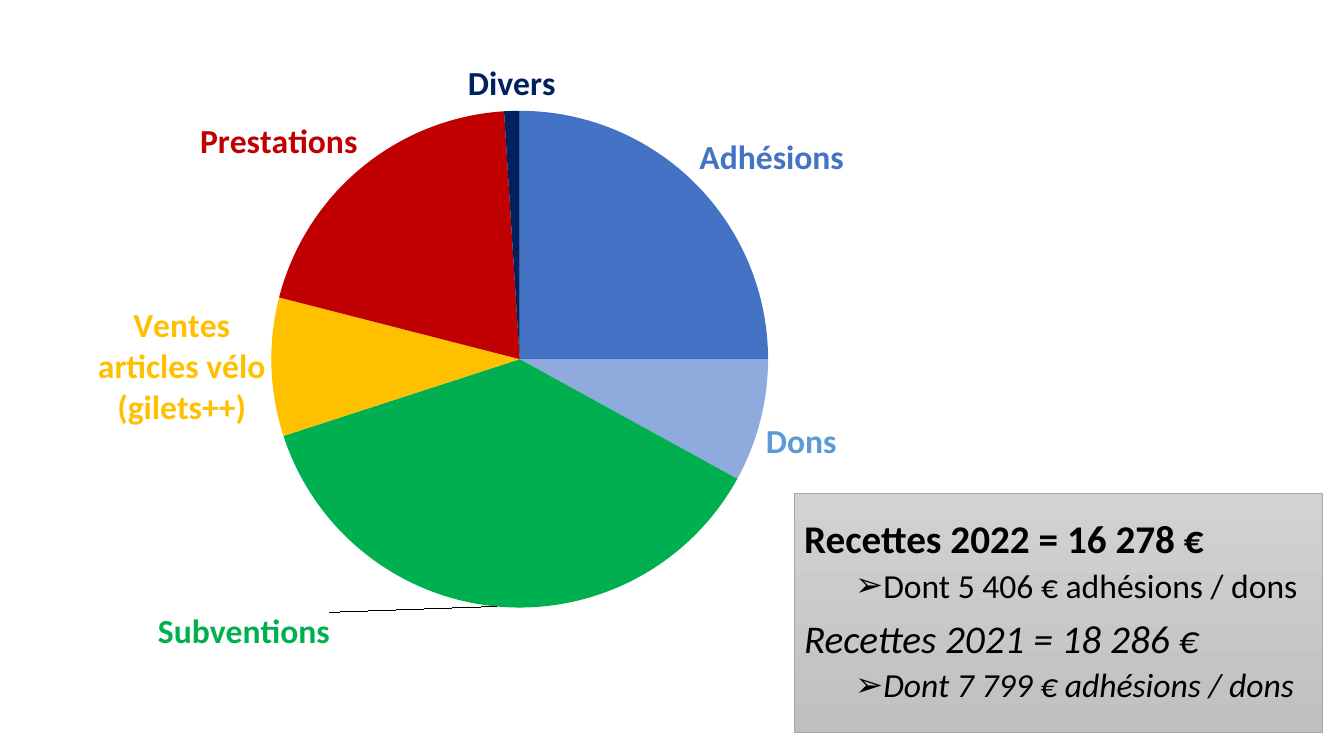
from lxml import etree
from pptx import Presentation
from pptx.chart.data import CategoryChartData
from pptx.dml.color import RGBColor
from pptx.enum.chart import XL_CHART_TYPE, XL_LABEL_POSITION
from pptx.enum.text import MSO_ANCHOR, MSO_AUTO_SIZE, PP_ALIGN
from pptx.oxml.ns import qn
from pptx.util import Pt

PIE = XL_CHART_TYPE.PIE
OUTSIDE_END = XL_LABEL_POSITION.OUTSIDE_END
MIDDLE = MSO_ANCHOR.MIDDLE
NO_AUTOFIT = MSO_AUTO_SIZE.NONE
LEFT = PP_ALIGN.LEFT
FONT = "Calibri"


def px(length):
    return round(length * 914400 / 100.8)


def color(value):
    return RGBColor.from_string(value)


presentation = Presentation()
presentation.slide_width = px(1344)
presentation.slide_height = px(756)
slide = presentation.slides.add_slide(presentation.slide_layouts[1])
title = slide.shapes.title
title.element.getparent().remove(title.element)

receipts = [
    ("Adhésions", 25, "4472C4", "4472C4"),
    ("Dons", 8, "8FAADC", "5B9BD5"),
    ("Subventions", 37, "00B050", "00B050"),
    ("Ventes articles vélo (gilets++)", 9, "FFC000", "FFC000"),
    ("Prestations", 20, "C00000", "C00000"),
    ("Divers", 1, "002060", "002060"),
]
chart_data = CategoryChartData()
chart_data.categories = [name for name, *_ in receipts]
chart_data.add_series("Recettes", [share for _, share, *_ in receipts])
chart = slide.shapes.add_chart(PIE, 0, px(49), px(976), px(618), chart_data).chart
chart.has_legend = False
chart.has_title = False
chart.font.name = FONT
chart.font.size = Pt(24)
plot = chart.plots[0]
plot.vary_by_categories = True
series = plot.series[0]

for index, (name, share, slice_color, label_color) in enumerate(receipts):
    point = series.points[index]
    point.format.fill.solid()
    point.format.fill.fore_color.rgb = color(slice_color)
    point.format.line.fill.background()
    label = point.data_label
    label.font.name = FONT
    label.font.size = Pt(24)
    label.font.bold = True
    label.font.color.rgb = color(label_color)
    label.position = OUTSIDE_END

chart_element = chart.element
for tag, shown in (("showVal", "0"), ("showCatName", "1")):
    for flag in chart_element.xpath(f".//c:dLbl/c:{tag}"):
        flag.set("val", shown)
for body in chart_element.xpath(".//c:dLbl/c:txPr/a:bodyPr"):
    body.set("wrap", "square")

pie_layout = {"layoutTarget": "inner", "xMode": "edge", "yMode": "edge",
              "x": 0.278, "y": 0.1, "w": 0.509, "h": 0.804}
subventions_layout = {"x": -0.17, "y": 0}
plot_area = chart_element.xpath(".//c:plotArea")[0]
subventions_label = chart_element.xpath(".//c:dLbl[c:idx/@val='2']")[0]
for parent, place, settings in ((plot_area, 0, pie_layout),
                                (subventions_label, 1, subventions_layout)):
    for former in parent.findall(qn("c:layout")):
        parent.remove(former)
    layout = etree.Element(qn("c:layout"))
    manual = etree.SubElement(layout, qn("c:manualLayout"))
    for tag, value in settings.items():
        etree.SubElement(manual, qn(f"c:{tag}")).set("val", str(value))
    parent.insert(place, layout)

summary = slide.placeholders[1]
summary.left, summary.top, summary.width, summary.height = map(px, (794, 493, 528, 239))
summary.fill.gradient()
summary.fill.gradient_angle = 270
for stop, shade in zip(summary.fill.gradient_stops, ("D2D2D2", "C0C0C0")):
    stop.color.rgb = color(shade)
summary.line.color.rgb = color("A5A5A5")
summary.line.width = Pt(0.5)

lines = [
    ("Recettes 2022 = 16 278 €", 0, True, False),
    ("Dont 5 406 € adhésions / dons", 1, False, False),
    ("Recettes 2021 = 18 286 €", 0, False, True),
    ("Dont 7 799 € adhésions / dons", 1, False, True),
]
text_frame = summary.text_frame
text_frame.text = "\n".join(text for text, *_ in lines)
text_frame.word_wrap = True
text_frame.auto_size = NO_AUTOFIT
text_frame.vertical_anchor = MIDDLE
for paragraph, (text, level, bold, italic) in zip(text_frame.paragraphs, lines):
    paragraph.level = level
    paragraph.alignment = LEFT
    paragraph.line_spacing = 0.9
    paragraph.space_before = Pt(5 if level else 10)
    paragraph.space_after = Pt(0)
    font = paragraph.runs[0].font
    font.name = FONT
    font.size = Pt(24 if level else 28)
    font.bold = bold
    font.italic = italic
    font.color.rgb = color("000000")
    properties = paragraph._p.get_or_add_pPr()
    properties.set("marL", str(px(76) if level else 0))
    properties.set("indent", str(px(-25) if level else 0))
    if level:
        etree.SubElement(properties, qn("a:buFont")).set("typeface", "Arial")
        etree.SubElement(properties, qn("a:buChar")).set("char", "➢")
    else:
        etree.SubElement(properties, qn("a:buNone"))

presentation.save("out.pptx")
